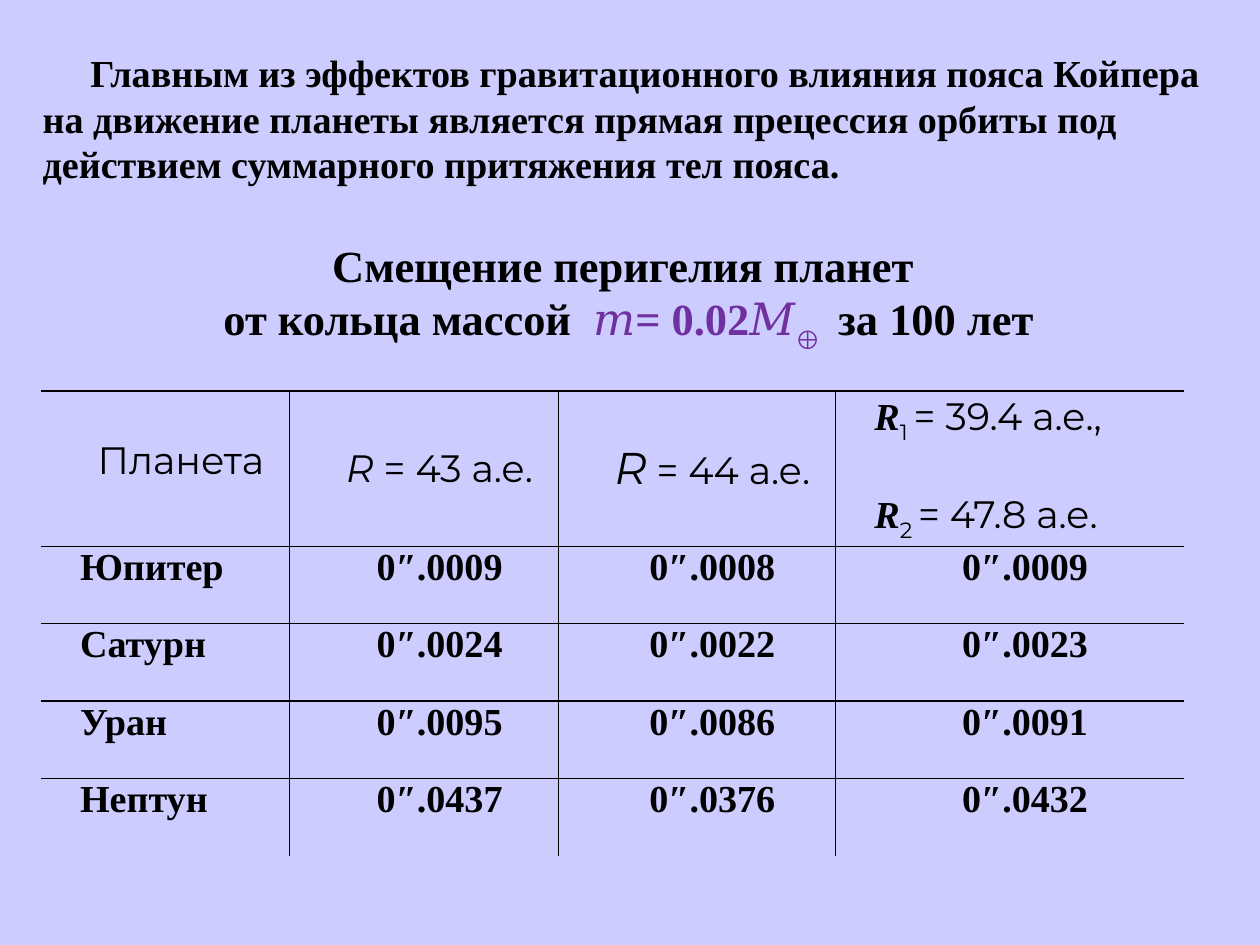
from lxml import etree
from pptx import Presentation
from pptx.dml.color import RGBColor
from pptx.enum.text import MSO_ANCHOR, MSO_AUTO_SIZE, PP_ALIGN
from pptx.oxml.ns import qn
from pptx.util import Cm, Pt

LEFT, CENTER = PP_ALIGN.LEFT, PP_ALIGN.CENTER
TOP, MIDDLE = MSO_ANCHOR.TOP, MSO_ANCHOR.MIDDLE
NO_AUTOFIT = MSO_AUTO_SIZE.NONE
TITLE_ONLY = 5
COLORS = {"background": "CCCCFF", "text": "000000", "mass": "7030A0"}

# A run is (text, format); the formats are named here
SERIF = {"name": "Times New Roman", "size": Pt(24), "bold": True, "italic": False}
SANS = {"name": "Montserrat", "size": Pt(24), "bold": False, "italic": False}
TITLE = {**SERIF, "size": Pt(28)}
MASS = {**TITLE, "color": "mass"}
RADIUS = {**SANS, "italic": True}
RING = {**SERIF, "italic": True}
INDEX = {**SANS, "baseline": -25}

INTRO = ("Главным из эффектов гравитационного влияния пояса Койпера на движение "
         "планеты является прямая прецессия орбиты под действием суммарного "
         "притяжения тел пояса.")
HEADING = [
    [("Смещение перигелия планет ", TITLE)],
    [("от кольца массой  ", TITLE), ("𝑚= 0.02𝑀", MASS),
     ("⊕ ", {**MASS, "baseline": -30}), (" за 100 лет", TITLE)],
]
HEADER = [
    [[("Планета", SANS)]],
    [[("R", RADIUS), (" = 43 а.е.", SANS)]],
    [[("R", {**RADIUS, "size": Pt(28)}), (" = 44 а.е.", SANS)]],
    [[("R", RING), ("1 ", INDEX), ("= 39.4 а.е.,", SANS)],
     [("R", RING), ("2 ", INDEX), ("= 47.8 а.е.", SANS)]],
]
SHIFTS = [
    ("Юпитер", "0″.0009", "0″.0008", "0″.0009"),
    ("Сатурн", "0″.0024", "0″.0022", "0″.0023"),
    ("Уран", "0″.0095", "0″.0086", "0″.0091"),
    ("Нептун", "0″.0437", "0″.0376", "0″.0432"),
]
COL_WIDTHS = [Cm(5.53), Cm(5.97), Cm(6.15), Cm(7.75)]
HEADER_HEIGHT, ROW_HEIGHT = Cm(3.45), Cm(1.72)


def write(tf, paragraphs, align=LEFT, indent=Cm(0.69), gap=Pt(0)):
    """Fill a text frame; gap is the space before every later paragraph."""
    for i, runs in enumerate(paragraphs):
        p = tf.add_paragraph() if i else tf.paragraphs[0]
        p.alignment = align
        p.space_before = gap if i else Pt(0)
        pPr = p._p.get_or_add_pPr()
        pPr.set("marL", "0")
        pPr.set("indent", str(int(indent)))
        for text, style in runs:
            r = p.add_run()
            r.text = text
            for key in ("name", "size", "bold", "italic"):
                setattr(r.font, key, style[key])
            color = COLORS[style.get("color", "text")]
            r.font.color.rgb = RGBColor.from_string(color)
            if "baseline" in style:
                r._r.get_or_add_rPr().set("baseline", str(style["baseline"] * 1000))


def set_borders(cell, visible):
    """Draw the named sides of a cell and hide the others."""
    tcPr = cell._tc.get_or_add_tcPr()
    for i, side in enumerate(("lnL", "lnR", "lnT", "lnB")):
        ln = etree.Element(qn(f"a:{side}"), w=str(int(Pt(1))))
        if side in visible:
            fill = etree.SubElement(ln, qn("a:solidFill"))
            etree.SubElement(fill, qn("a:srgbClr"), val=COLORS["text"])
        else:
            etree.SubElement(ln, qn("a:noFill"))
        tcPr.insert(i, ln)


def add_shift_table(slide):
    rows = [HEADER] + [[[[(text, SERIF)]] for text in row] for row in SHIFTS]
    last_row, last_col = len(rows) - 1, len(COL_WIDTHS) - 1
    table = slide.shapes.add_table(
        len(rows), len(COL_WIDTHS), Cm(0.91), Cm(8.69),
        sum(COL_WIDTHS), HEADER_HEIGHT + last_row * ROW_HEIGHT).table
    table.first_row = table.horz_banding = False
    for column, width in zip(table.columns, COL_WIDTHS):
        column.width = width
    for i, row in enumerate(rows):
        table.rows[i].height = ROW_HEIGHT if i else HEADER_HEIGHT
        for j, paragraphs in enumerate(row):
            cell = table.cell(i, j)
            cell.fill.background()
            planet_header = i == 0 and j == 0
            layout = {
                "margin_left": Cm(0.18), "margin_right": Cm(0.18),
                "margin_top": Cm(1.04) if planet_header else 0,
                "margin_bottom": 0,
                "vertical_anchor": MIDDLE if i == 0 and j else TOP,
            }
            for key, value in layout.items():
                setattr(cell, key, value)
            at_left = (i and j == 0) or (i == 0 and j == last_col)
            write(cell.text_frame, paragraphs, LEFT if at_left else CENTER, gap=Pt(29))
            sides = {"lnT": True, "lnB": i < last_row, "lnL": j > 0, "lnR": j < last_col}
            set_borders(cell, [side for side, shown in sides.items() if shown])


def main():
    prs = Presentation()
    prs.slide_width, prs.slide_height = Cm(28), Cm(21)
    slide = prs.slides.add_slide(prs.slide_layouts[TITLE_ONLY])
    slide.background.fill.solid()
    slide.background.fill.fore_color.rgb = RGBColor.from_string(COLORS["background"])

    intro = slide.shapes.add_textbox(Cm(0.7), Cm(0.97), Cm(26.6), Cm(3.33))
    intro.text_frame.word_wrap = True
    write(intro.text_frame, [[(INTRO, SERIF)]], indent=Cm(1.06))

    title = slide.shapes.title
    place = {"left": Cm(0.91), "top": Cm(5.26), "width": Cm(25.4), "height": Cm(2.64)}
    for key, value in place.items():
        setattr(title, key, value)
    tf = title.text_frame
    tf.auto_size, tf.vertical_anchor = NO_AUTOFIT, MIDDLE
    write(tf, HEADING, CENTER, Cm(0.71))

    add_shift_table(slide)
    prs.save("out.pptx")


if __name__ == "__main__":
    main()
